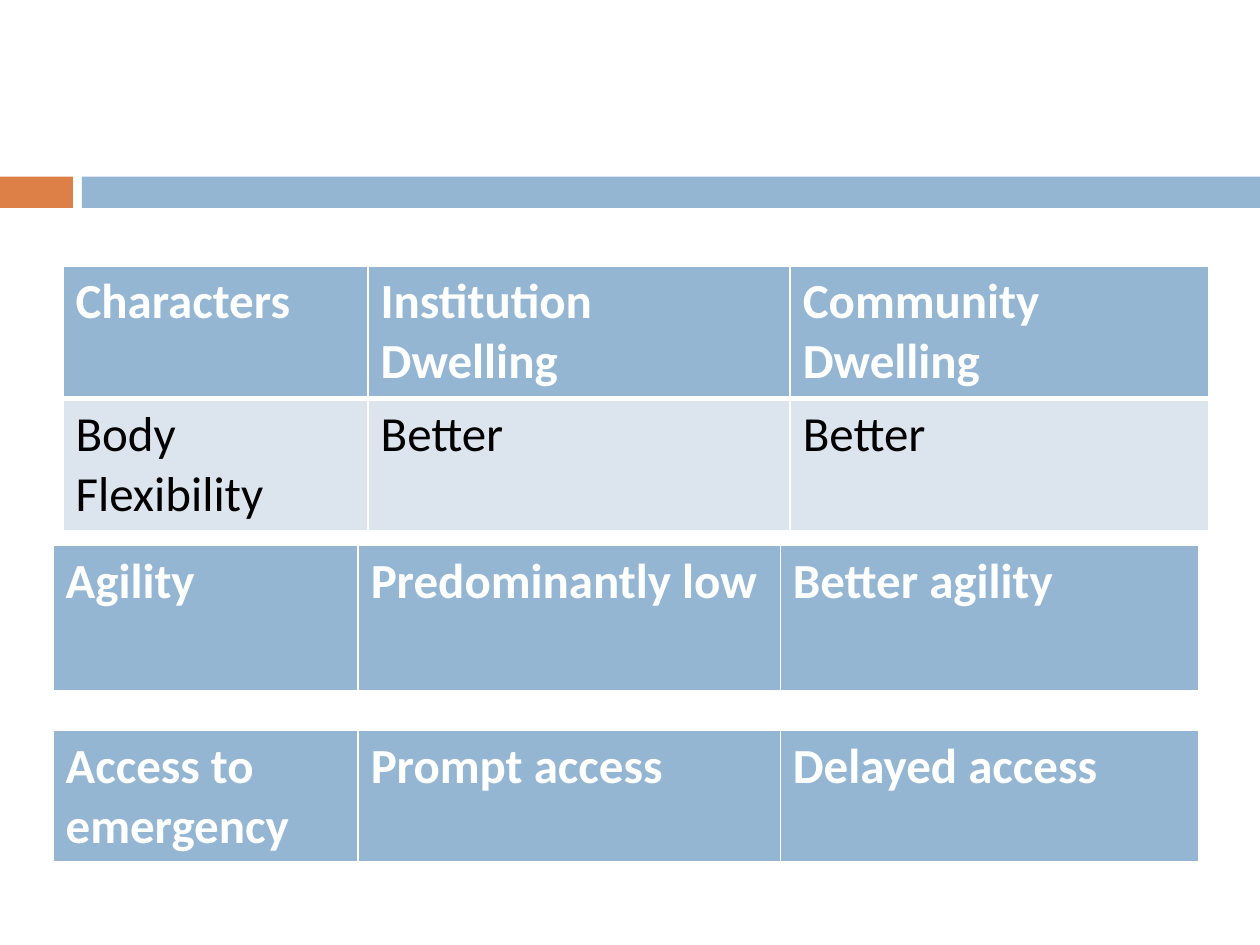
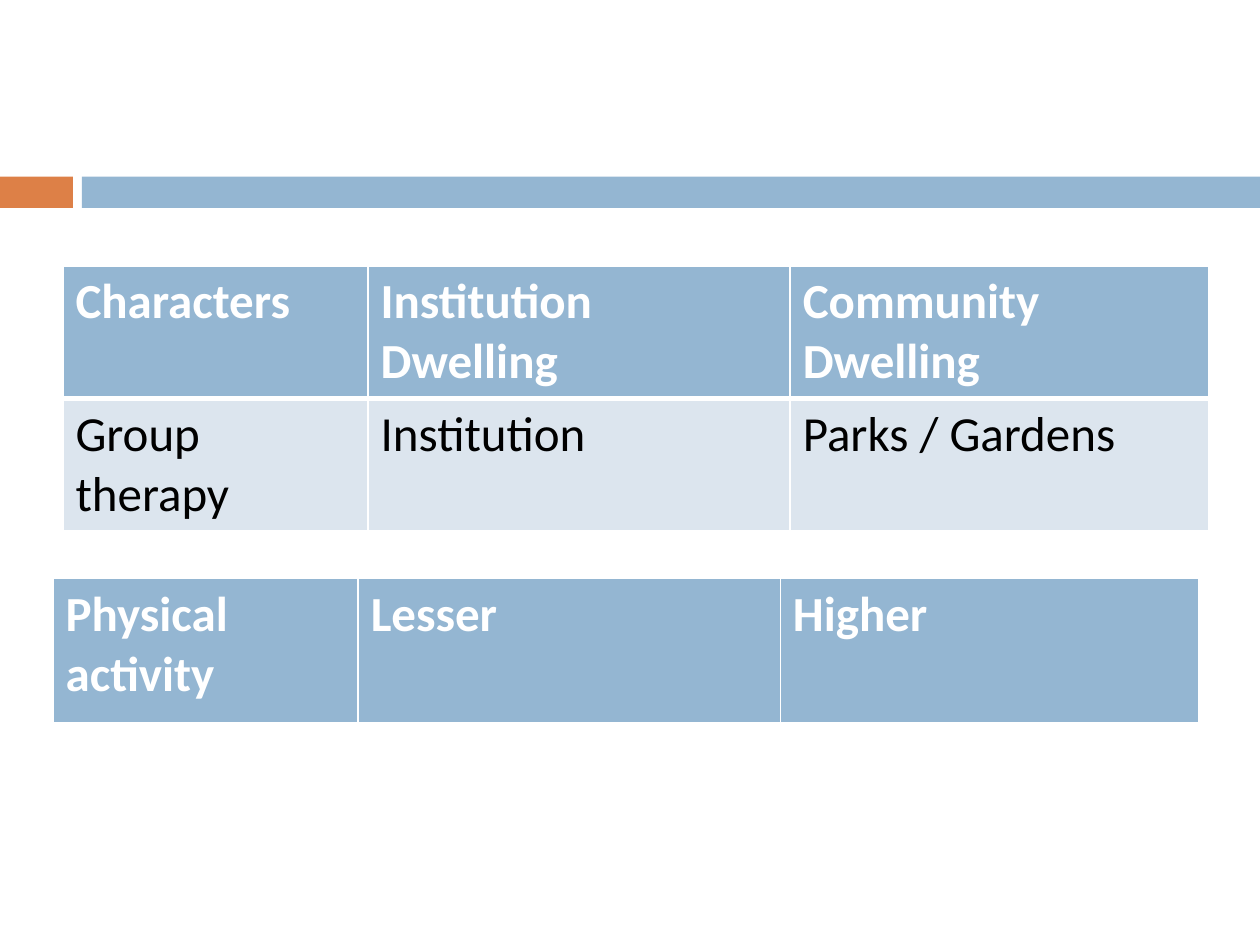
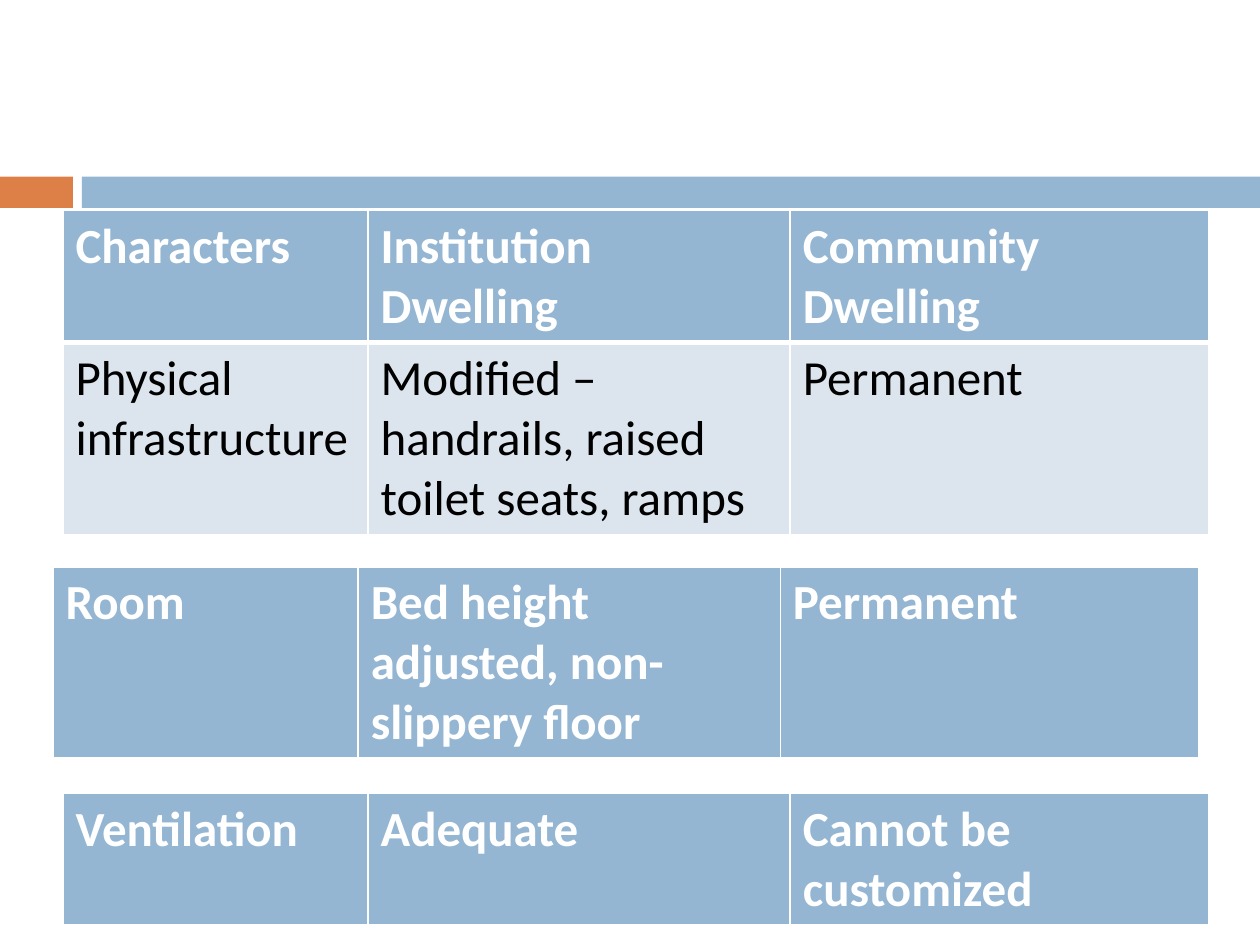
from lxml.etree import SubElement
from pptx import Presentation
from pptx.dml.color import RGBColor
from pptx.enum.shapes import MSO_SHAPE as Shape
from pptx.oxml.ns import qn
from pptx.util import Cm, Pt

ORANGE = RGBColor(0xDD, 0x80, 0x47)
BLUE = RGBColor(0x94, 0xB6, 0xD2)
PALE = RGBColor(0xDC, 0xE5, 0xEE)
WHITE = RGBColor(0xFF, 0xFF, 0xFF)
BLACK = RGBColor(0x00, 0x00, 0x00)

FONT, SIZE = "Calibri", 28
BANDS = [(0, 1.47, ORANGE), (1.65, 23.75, BLUE)]
BAND_TOP, BAND_HEIGHT = 3.56, 0.63
COLUMNS = [6.15, 8.51, 8.43]
INDENTED, OUTER = 1.27, 1.07
SHORT, MEDIUM, TALL = 2.62, 2.95, 3.81
HEADINGS = ("Characters", "Institution Dwelling", "Community Dwelling")

# Each table: left, top, rows of (height, texts)
PAGES = [
    [
        (INDENTED, 5.36, [(SHORT, HEADINGS),
                          (SHORT, ("Body Flexibility", "Better", "Better"))]),
        (OUTER, 11, [(MEDIUM, ("Agility", "Predominantly low", "Better agility"))]),
        (OUTER, 14.73, [(SHORT, ("Access to emergency", "Prompt access", "Delayed access"))]),
    ],
    [
        (INDENTED, 5.36, [(SHORT, HEADINGS),
                          (SHORT, ("Group therapy", "Institution", "Parks / Gardens"))]),
        (OUTER, 11.66, [(MEDIUM, ("Physical activity", "Lesser", "Higher"))]),
    ],
    [
        (INDENTED, 4.24, [(SHORT, HEADINGS),
                          (TALL, ("Physical infrastructure",
                                  "Modified – handrails, raised toilet seats, ramps",
                                  "Permanent"))]),
        (INDENTED, 16, [(SHORT, ("Ventilation", "Adequate", "Cannot be customized"))]),
        (OUTER, 11.43, [(TALL, ("Room", "Bed height adjusted, non-slippery floor",
                                "Permanent"))]),
    ],
]


def add_bands(deck, page):
    """Draw the two bands and move them to the slide master."""
    for left, width, color in BANDS:
        band = page.shapes.add_shape(Shape.RECTANGLE, Cm(left), Cm(BAND_TOP),
                                     Cm(width), Cm(BAND_HEIGHT))
        band.shadow.inherit = False
        band.fill.solid()
        band.fill.fore_color.rgb = color
        band.line.fill.background()
        deck.slide_master.shapes.element.append(band.element)


def set_borders(cell, top, bottom):
    """Give a cell white borders, with top and bottom widths in points."""
    properties = cell._tc.get_or_add_tcPr()
    widths = {"a:lnL": 1, "a:lnR": 1, "a:lnT": top, "a:lnB": bottom}
    for place, (tag, width) in enumerate(widths.items()):
        line = SubElement(properties, qn(tag), w=str(Pt(width)))
        fill = SubElement(line, qn("a:solidFill"))
        SubElement(fill, qn("a:srgbClr"), val=str(WHITE))
        properties.insert(place, line)


def write_cell(cell, text, *, fill, color, bold):
    """Fill a cell and write its formatted text."""
    cell.fill.solid()
    cell.fill.fore_color.rgb = fill
    span = cell.text_frame.paragraphs[0].add_run()
    span.text = text
    span.font.name, span.font.size = FONT, Pt(SIZE)
    span.font.bold, span.font.color.rgb = bold, color


def add_comparison(page, left, top, rows):
    """Add a three-column table whose first row is a heading."""
    height = sum(row_height for row_height, _ in rows)
    table = page.shapes.add_table(len(rows), len(COLUMNS), Cm(left), Cm(top),
                                  Cm(sum(COLUMNS)), Cm(height)).table
    table.horz_banding = False
    for column, width in zip(table.columns, COLUMNS):
        column.width = Cm(width)
    for index, (row_height, texts) in enumerate(rows):
        table.rows[index].height = Cm(row_height)
        heading = index == 0
        for cell, text in zip(table.rows[index].cells, texts):
            write_cell(cell, text, fill=BLUE if heading else PALE,
                       color=WHITE if heading else BLACK, bold=heading)
            set_borders(cell, top=1 if heading else 3, bottom=3 if heading else 1)


def main():
    """Build the deck and save it."""
    deck = Presentation()
    deck.slide_width, deck.slide_height = Cm(25.4), Cm(19.05)
    blank = deck.slide_layouts[6]
    for tables in PAGES:
        page = deck.slides.add_slide(blank)
        for left, top, rows in tables:
            add_comparison(page, left, top, rows)
    add_bands(deck, deck.slides[0])
    deck.save("out.pptx")


if __name__ == "__main__":
    main()
